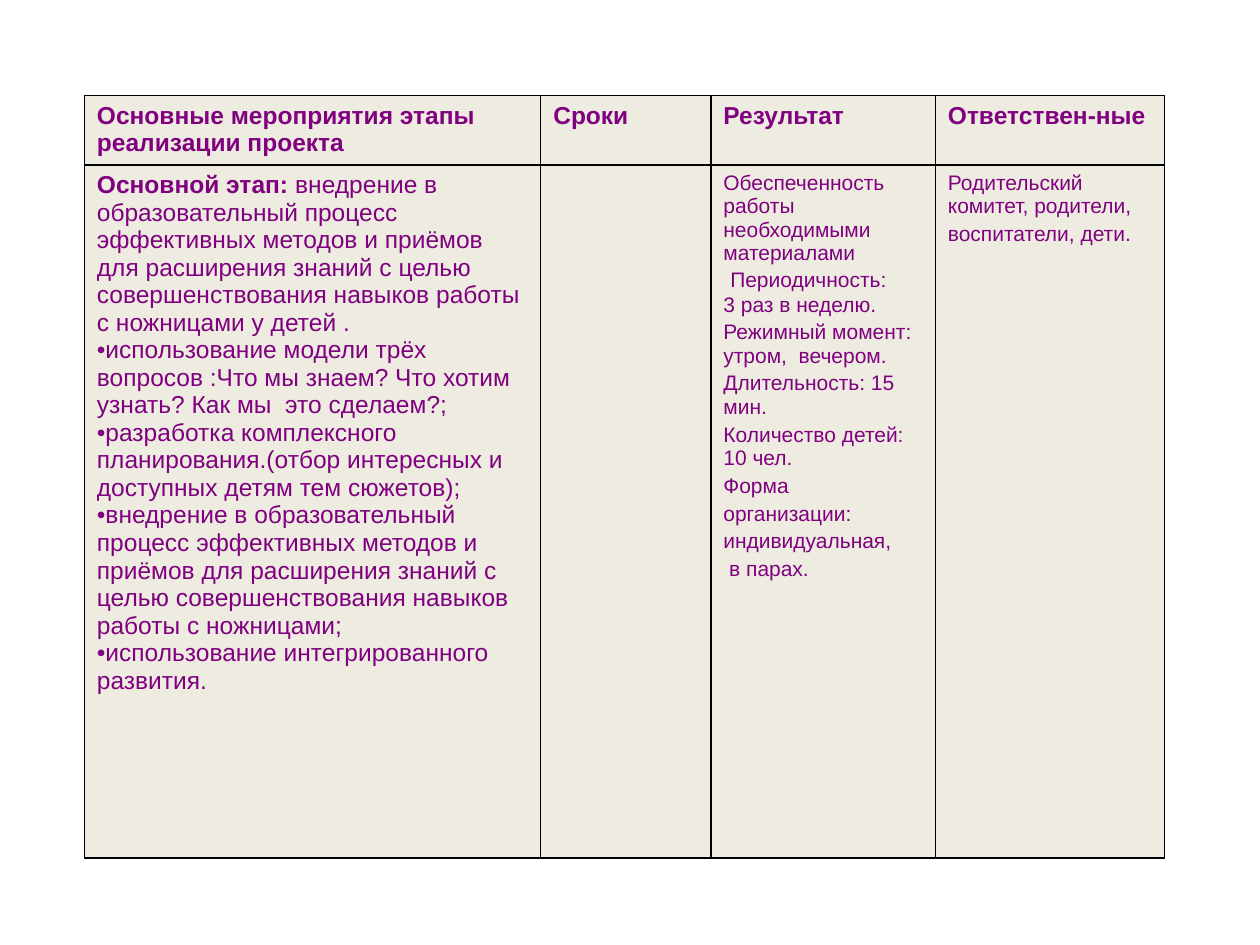
from dataclasses import dataclass

from lxml import etree
from pptx import Presentation
from pptx.dml.color import RGBColor
from pptx.enum.text import MSO_ANCHOR
from pptx.oxml.ns import qn
from pptx.table import _Cell
from pptx.util import Pt

TOP = MSO_ANCHOR.TOP


@dataclass(frozen=True)
class Theme:
    font: str = "Arial"
    text: RGBColor = RGBColor(0x80, 0x00, 0x80)
    cell: RGBColor = RGBColor(0xEE, 0xEC, 0xE1)
    border: str = "000000"
    border_width: Pt = Pt(1)
    large: Pt = Pt(14)
    small: Pt = Pt(12)
    gap: Pt = Pt(2.4)


THEME = Theme()


@dataclass(frozen=True)
class Span:
    text: str
    size: Pt = THEME.large
    bold: bool = False


@dataclass(frozen=True)
class Line:
    spans: tuple[Span, ...]
    bullet: bool = False
    before: Pt = Pt(0)


def heading(text: str) -> list[Line]:
    return [Line((Span(text, bold=True),))]


def bullet(text: str) -> Line:
    return Line((Span(text),), bullet=True)


def detail(text: str, before: Pt = THEME.gap) -> Line:
    return Line((Span(text, THEME.small),), before=before)


# Table content
HEADER = [
    heading("Основные мероприятия этапы реализации проекта"),
    heading("Сроки"),
    heading("Результат"),
    heading("Ответствен-ные"),
]
ACTIVITIES = [
    Line((
        Span("Основной этап: ", bold=True),
        Span("внедрение в образовательный процесс эффективных методов и приёмов "
             "для расширения знаний с целью совершенствования навыков работы "
             "с ножницами у детей ."),
    )),
    bullet("использование модели трёх вопросов :Что мы знаем? Что хотим узнать? "
           "Как мы  это сделаем?;"),
    bullet("разработка комплексного планирования.(отбор интересных и доступных "
           "детям тем сюжетов);"),
    bullet("внедрение в образовательный процесс эффективных методов и приёмов "
           "для расширения знаний с целью совершенствования навыков работы "
           "с ножницами;"),
    bullet("использование интегрированного развития."),
]
RESULTS = [
    detail("Обеспеченность работы необходимыми материалами", Pt(0)),
    Line((Span(" "), Span("Периодичность:", THEME.small))),
    detail("3 раз в неделю.", Pt(0)),
    detail("Режимный момент: утром,  вечером."),
    detail("Длительность: 15 мин."),
    detail("Количество детей: 10 чел."),
    detail("Форма"),
    detail("организации:"),
    detail("индивидуальная,"),
    detail(" в парах."),
]
RESPONSIBLE = [
    detail("Родительский комитет, родители,", Pt(0)),
    detail("воспитатели, дети."),
]
ROWS = [HEADER, [ACTIVITIES, [], RESULTS, RESPONSIBLE]]

# Table geometry
LEFT, TABLE_TOP = Pt(48.2), Pt(54.7)
COLUMN_WIDTHS = [Pt(260.8), Pt(97.2), Pt(128.3), Pt(131.1)]
ROW_HEIGHTS = [Pt(39.6), Pt(396)]


def draw_borders(cell: _Cell) -> None:
    properties = cell._tc.get_or_add_tcPr()
    for side in ("lnL", "lnR", "lnT", "lnB"):
        edge = etree.SubElement(properties, qn(f"a:{side}"), w=str(THEME.border_width))
        fill = etree.SubElement(edge, qn("a:solidFill"))
        etree.SubElement(fill, qn("a:srgbClr"), val=THEME.border)


def write_lines(cell: _Cell, lines: list[Line]) -> None:
    frame = cell.text_frame
    for index, line in enumerate(lines):
        paragraph = frame.add_paragraph() if index else frame.paragraphs[0]
        paragraph.space_before = line.before
        if line.bullet:
            properties = paragraph._p.get_or_add_pPr()
            properties.set("marL", "0")
            properties.set("indent", "0")
            etree.SubElement(properties, qn("a:buFont"), typeface=THEME.font)
            etree.SubElement(properties, qn("a:buChar"), char="•")
        for span in line.spans:
            run = paragraph.add_run()
            run.text = span.text
            run.font.color.rgb = THEME.text
            formats = {"name": THEME.font, "size": span.size, "bold": span.bold}
            for name, value in formats.items():
                setattr(run.font, name, value)


def draw_cell(cell: _Cell, lines: list[Line]) -> None:
    draw_borders(cell)
    cell.fill.solid()
    cell.fill.fore_color.rgb = THEME.cell
    cell.vertical_anchor = TOP
    write_lines(cell, lines)


def main() -> None:
    presentation = Presentation()
    presentation.slide_width, presentation.slide_height = Pt(720), Pt(540)
    slide = presentation.slides.add_slide(presentation.slide_layouts[6])

    # Project plan table
    plan = slide.shapes.add_table(
        len(ROWS), len(COLUMN_WIDTHS), LEFT, TABLE_TOP,
        sum(COLUMN_WIDTHS), sum(ROW_HEIGHTS),
    ).table
    for name, value in {"first_row": False, "horz_banding": False}.items():
        setattr(plan, name, value)
    for column, width in zip(plan.columns, COLUMN_WIDTHS):
        column.width = width
    for row, height, contents in zip(plan.rows, ROW_HEIGHTS, ROWS):
        row.height = height
        for cell, lines in zip(row.cells, contents):
            draw_cell(cell, lines)

    presentation.save("out.pptx")


if __name__ == "__main__":
    main()
